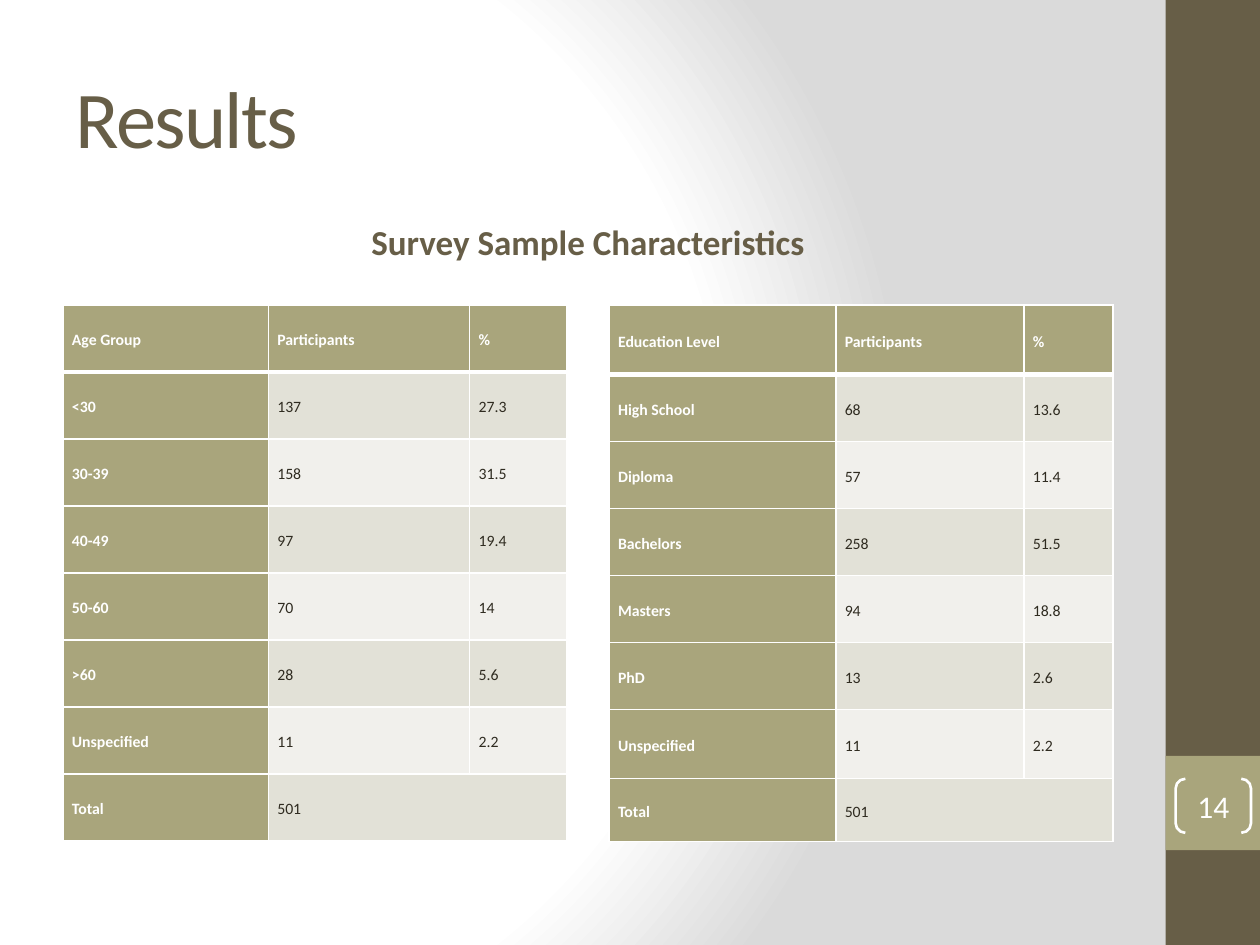
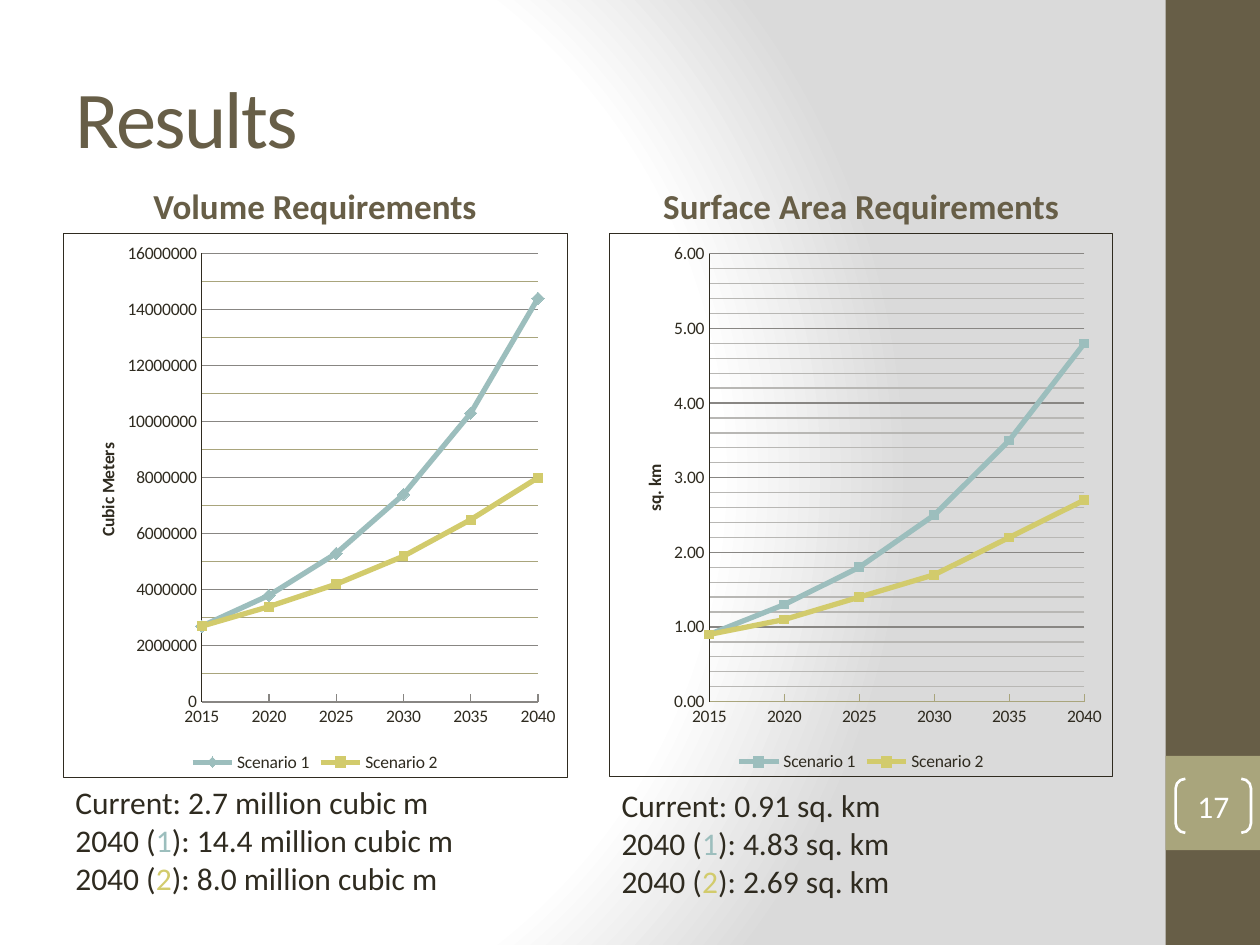
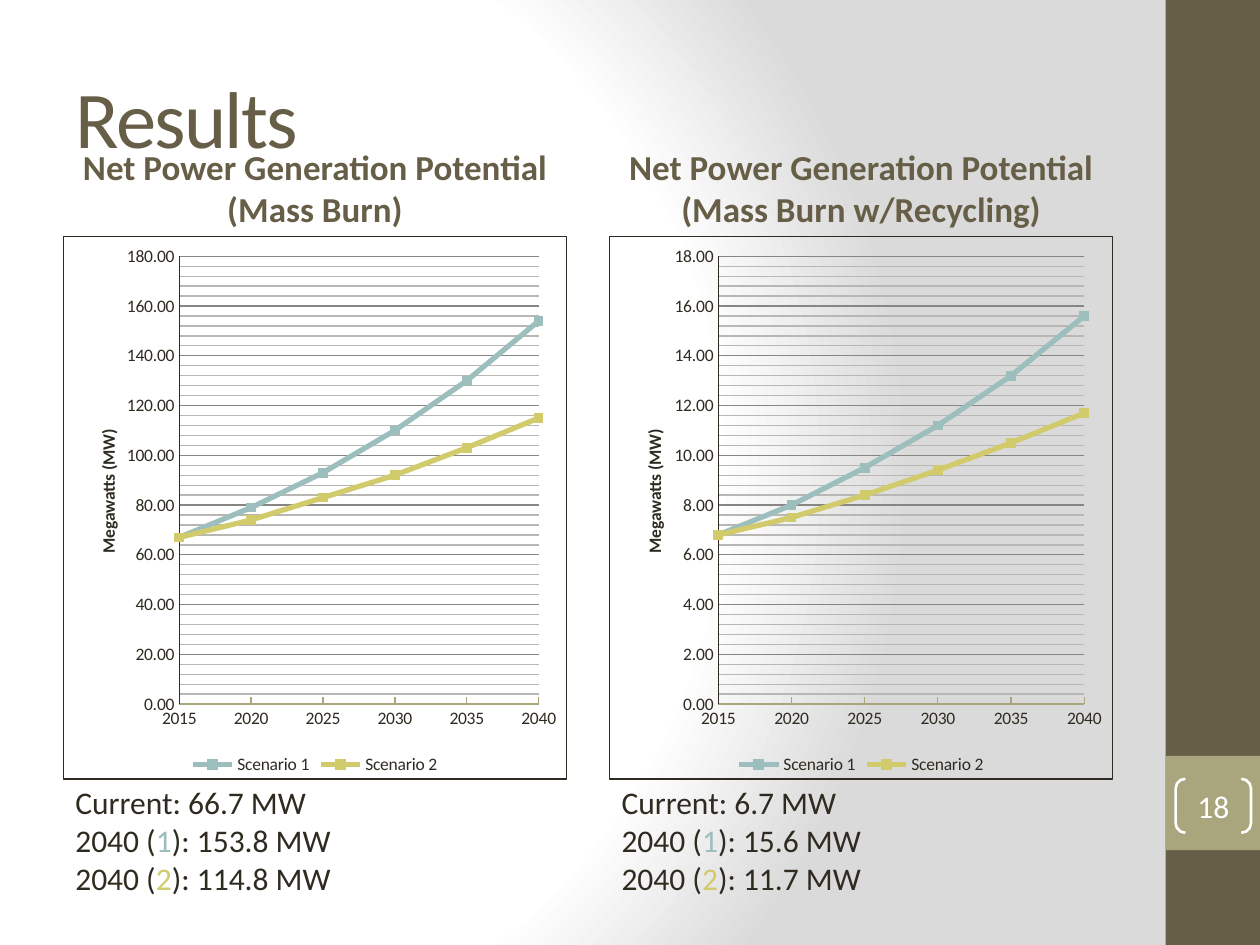
"""Build three results slides with survey tables and scenario line charts."""
from pptx import Presentation
from pptx.chart.data import CategoryChartData
from pptx.dml.color import RGBColor
from pptx.enum.chart import XL_CHART_TYPE as ChartType
from pptx.enum.chart import XL_LEGEND_POSITION as LegendPosition
from pptx.enum.chart import XL_MARKER_STYLE as Marker
from pptx.enum.chart import XL_TICK_MARK as TickMark
from pptx.enum.shapes import MSO_SHAPE as Preset
from pptx.enum.text import MSO_ANCHOR as Anchor
from pptx.enum.text import MSO_AUTO_SIZE as AutoSize
from pptx.enum.text import PP_ALIGN as Align
from pptx.oxml import parse_xml
from pptx.oxml.ns import nsdecls, qn
from pptx.util import Cm, Pt

FONT = "Calibri"
COLORS = {
    "brown": "675E47", "olive": "A9A57C", "ink": "2F2B20", "white": "FFFFFF",
    "shade": "DADADA", "band_dark": "E2E1D7", "band_light": "F1F0EC",
    "scenario_1": "9CBEBD", "scenario_2": "D2CB6C",
    "major_grid": "888683", "minor_grid": "B8B7B4",
}
LEFT, CONTENT_WIDTH, COLUMN_WIDTH = 1.27, 21.17, 10.16
COLUMN_LEFTS = (LEFT, LEFT + CONTENT_WIDTH - COLUMN_WIDTH)
TABLE_TOP, CHART_HEIGHT, NOTE_HEIGHT = 6.15, 10.97, 2.57
YEARS = ["2015", "2020", "2025", "2030", "2035", "2040"]

TABLES = [
    {"widths": [4.14, 4.06, 1.96], "heights": [1.35] * 8, "rows": [
        ("Age Group", "Participants", "%"),
        ("<30", "137", "27.3"), ("30-39", "158", "31.5"), ("40-49", "97", "19.4"),
        ("50-60", "70", "14"), (">60", "28", "5.6"), ("Unspecified", "11", "2.2"),
        ("Total", "501", "")]},
    {"widths": [4.57, 3.79, 1.8], "heights": [1.4] + [1.35] * 5 + [1.4, 1.27], "rows": [
        ("Education Level", "Participants", "%"),
        ("High School", "68", "13.6"), ("Diploma", "57", "11.4"),
        ("Bachelors", "258", "51.5"), ("Masters", "94", "18.8"),
        ("PhD", "13", "2.6"), ("Unspecified", "11", "2.2"), ("Total", "501", "")]},
]
CHART_SLIDES = [
    {"number": "17", "heading_top": 2.92, "chart_top": 4.7, "panels": [
        {"heading": "Volume Requirements", "axis": "Cubic Meters", "format": "0",
         "scale": (16000000, 2000000, 1000000), "plot": (0.275, 0.668), "title_top": 0.38,
         "minor": "olive", "axis_line": "major_grid", "border": 0.25,
         "marker": (Marker.DIAMOND, 7), "note_top": 15.67,
         "values": [(2700000, 3800000, 5300000, 7400000, 10300000, 14400000),
                    (2700000, 3400000, 4200000, 5200000, 6500000, 8000000)],
         "note": ("2.7 million cubic m", "14.4 million cubic m", "8.0 million cubic m")},
        {"heading": "Surface Area Requirements", "axis": "sq. km",
         "scale": (6, 1, 0.2), "plot": (0.198, 0.746), "title_top": 0.42, "note_top": 15.72,
         "values": [(0.9, 1.3, 1.8, 2.5, 3.5, 4.8), (0.9, 1.1, 1.4, 1.7, 2.2, 2.7)],
         "note": ("0.91 sq. km", "4.83 sq. km", "2.69 sq. km")}]},
    {"number": "18", "heading_top": 2.97, "chart_top": 4.75, "panels": [
        {"heading": "Net Power Generation Potential (Mass Burn)", "axis": "Megawatts (MW)",
         "scale": (180, 20, 4), "plot": (0.23, 0.715), "title_top": 0.35, "note_top": 15.67,
         "values": [(67, 79, 93, 110, 130, 154), (67, 74, 83, 92, 103, 115)],
         "note": ("66.7 MW", "153.8 MW", "114.8 MW")},
        {"heading": "Net Power Generation Potential (Mass Burn w/Recycling)",
         "axis": "Megawatts (MW)",
         "scale": (18, 2, 0.4), "plot": (0.216, 0.728), "title_top": 0.35, "note_top": 15.67,
         "values": [(6.8, 8, 9.5, 11.2, 13.2, 15.6), (6.8, 7.5, 8.4, 9.4, 10.5, 11.7)],
         "note": ("6.7 MW", "15.6 MW", "11.7 MW")}]},
]


def rgb(name):
    return RGBColor.from_string(COLORS[name])


def box(left, top, width, height):
    return Cm(left), Cm(top), Cm(width), Cm(height)


def move(shape, *lengths):
    shape.left, shape.top, shape.width, shape.height = box(*lengths)


def write(frame, lines, size=18, color="ink", bold=False, align=Align.LEFT, anchor=Anchor.TOP,
          spacing=None, line_spacing=None, space_after=None):
    """Fill a text frame; a line is a string or a list of (text, color) pairs."""
    frame.word_wrap = True
    frame.vertical_anchor = anchor
    for index, line in enumerate(lines):
        paragraph = frame.add_paragraph() if index else frame.paragraphs[0]
        paragraph.alignment = align
        paragraph.line_spacing = line_spacing
        paragraph.space_after = space_after
        for text, run_color in [(line, color)] if isinstance(line, str) else line:
            run = paragraph.add_run()
            run.text = text
            run.font.name, run.font.size, run.font.bold = FONT, Pt(size), bold
            run.font.color.rgb = rgb(run_color)
            if spacing is not None:
                run.font._element.set("spc", str(spacing))


def style_line(line, color, width):
    line.color.rgb = rgb(color)
    line.width = Pt(width)


def line_xml(tag, color, width):
    return (f'<a:{tag} {nsdecls("a")} w="{Pt(width)}"><a:solidFill>'
            f'<a:srgbClr val="{COLORS[color]}"/></a:solidFill></a:{tag}>')


def style_master(master, slide):
    master.background.fill.solid()
    properties = master.element.cSld.bg.bgPr
    stops = "".join(
        f'<a:gs pos="{position}000"><a:srgbClr val="{COLORS[color]}"/></a:gs>'
        for position, color in ((0, "white"), (75, "white"), (100, "shade")))
    properties.replace(properties[0], parse_xml(
        f'<a:gradFill {nsdecls("a")} rotWithShape="1"><a:gsLst>{stops}</a:gsLst>'
        '<a:path path="circle"><a:fillToRect l="20000" t="50000" r="100000" b="50000"/>'
        '</a:path></a:gradFill>'))
    bands = (("brown", 0, 19.05), ("olive", 15.24, 1.9))
    for index, (color, top, height) in enumerate(bands):
        band = slide.shapes.add_shape(Preset.RECTANGLE, *box(23.5, top, 1.9, height))
        band.shadow.inherit = False
        band.fill.solid()
        band.fill.fore_color.rgb = rgb(color)
        band.line.fill.background()
        master.element.cSld.spTree.insert(2 + index, band._element)


def add_results_slide(presentation, number, headings, heading_top, heading_width, heading_height):
    slide = presentation.slides.add_slide(presentation.slide_layouts[4])
    title = slide.shapes.title
    move(title, LEFT, 0.76, CONTENT_WIDTH, 3.18)
    title.text_frame.auto_size = AutoSize.NONE
    write(title.text_frame, ["Results"], size=46, color="brown", anchor=Anchor.MIDDLE,
          spacing=-100)
    placeholders = {item.placeholder_format.idx: item for item in slide.placeholders}
    for index, left, heading in zip((1, 3), COLUMN_LEFTS, headings):
        body = placeholders[index]
        move(body, left, heading_top, heading_width, heading_height)
        body.text_frame.auto_size = AutoSize.NONE
        write(body.text_frame, [heading], size=20, color="brown", bold=True,
              align=Align.CENTER, anchor=Anchor.BOTTOM)
    for placeholder in placeholders.values():
        if not placeholder.text_frame.text:
            placeholder._element.getparent().remove(placeholder._element)
    bracket = slide.shapes.add_shape(Preset.DOUBLE_BRACKET, *box(23.7, 15.7, 1.52, 1.09))
    bracket.adjustments[0] = 0.18
    bracket.shadow.inherit = False
    bracket.fill.background()
    style_line(bracket.line, "white", 1.5)
    frame = bracket.text_frame
    frame.margin_left = frame.margin_right = frame.margin_top = frame.margin_bottom = 0
    write(frame, [number], color="white", align=Align.CENTER, anchor=Anchor.MIDDLE)
    return slide


def set_borders(cell, top, bottom):
    properties = cell._tc.get_or_add_tcPr()
    for index, (side, width) in enumerate((("L", 1), ("R", 1), ("T", top), ("B", bottom))):
        properties.insert(index, parse_xml(line_xml(f"ln{side}", "white", width)))


def add_survey_table(slide, left, widths, heights, rows):
    table = slide.shapes.add_table(
        len(rows), len(widths),
        *box(left, TABLE_TOP, sum(widths), sum(heights))).table
    for column, width in zip(table.columns, widths):
        column.width = Cm(width)
    for row, height in zip(table.rows, heights):
        row.height = Cm(height)
    for row_index, row in enumerate(rows):
        for column_index, text in enumerate(row):
            cell = table.cell(row_index, column_index)
            is_label = row_index == 0 or column_index == 0
            band = "band_dark" if row_index % 2 else "band_light"
            cell.fill.solid()
            cell.fill.fore_color.rgb = rgb("olive" if is_label else band)
            cell.margin_left = cell.margin_right = Cm(0.18)
            cell.margin_top, cell.margin_bottom = Cm(0.02), 0
            cell.vertical_anchor = Anchor.MIDDLE
            set_borders(cell, 3 if row_index == 1 else 1, 3 if row_index == 0 else 1)
            if text:
                write(cell.text_frame, [text], size=9, bold=is_label,
                      color="white" if is_label else "ink", align=Align.JUSTIFY,
                      anchor=Anchor.MIDDLE, line_spacing=1.15, space_after=Pt(10))
    last = len(rows) - 1
    table.cell(last, 1).merge(table.cell(last, 2))


def set_layout(parent, target="", **fractions):
    inner = f'<c:layoutTarget val="{target}"/>' if target else ""
    modes = "".join(f'<c:{key}Mode val="edge"/>' for key in fractions if key in "xy")
    values = "".join(f'<c:{key} val="{value}"/>' for key, value in fractions.items())
    layout = parse_xml(f'<c:layout {nsdecls("c")}><c:manualLayout>{inner}{modes}{values}'
                       '</c:manualLayout></c:layout>')
    existing = parent.find(qn("c:layout"))
    if existing is None:
        parent.insert(0, layout)
    else:
        parent.replace(existing, layout)


def style_value_axis(axis, panel):
    axis.minimum_scale = 0
    axis.maximum_scale, axis.major_unit, minor_unit = panel["scale"]
    axis.has_major_gridlines = axis.has_minor_gridlines = True
    style_line(axis.major_gridlines.format.line, "major_grid", 0.75)
    style_line(axis.format.line, "ink", 0.25)
    axis.major_tick_mark = axis.minor_tick_mark = TickMark.NONE
    axis.tick_labels.number_format = panel.get("format", "0.00")
    axis.tick_labels.number_format_is_linked = False
    element = axis._element
    minor_line = line_xml("ln", panel.get("minor", "minor_grid"), 0.75)
    element.find(qn("c:minorGridlines")).append(
        parse_xml(f'<c:spPr {nsdecls("c")}>{minor_line}</c:spPr>'))
    for old in element.findall(qn("c:crossBetween")) + element.findall(qn("c:minorUnit")):
        element.remove(old)
    element.find(qn("c:crosses")).addnext(
        parse_xml(f'<c:crossBetween {nsdecls("c")} val="midCat"/>'))
    element.find(qn("c:majorUnit")).addnext(
        parse_xml(f'<c:minorUnit {nsdecls("c")} val="{minor_unit}"/>'))
    frame = axis.axis_title.text_frame
    write(frame, [panel["axis"]], size=10, bold=True, align=Align.CENTER)
    frame._txBody.bodyPr.set("rot", "-5400000")
    frame._txBody.bodyPr.set("vert", "horz")
    set_layout(element.find(qn("c:title")), x=0.06, y=panel["title_top"])


def add_scenario_chart(slide, left, top, panel):
    data = CategoryChartData()
    data.categories = YEARS
    for index, values in enumerate(panel["values"], 1):
        data.add_series(f"Scenario {index}", values)
    chart = slide.shapes.add_chart(
        ChartType.LINE_MARKERS, *box(left, top, COLUMN_WIDTH, CHART_HEIGHT), data).chart
    chart.has_title = False
    chart.font.name, chart.font.size = FONT, Pt(10)
    chart.font.color.rgb = rgb("ink")
    chart.has_legend = True
    chart.legend.position = LegendPosition.BOTTOM
    chart.legend.include_in_layout = False
    plot = chart.plots[0]
    plot.vary_by_categories = False
    markers = (panel.get("marker", (Marker.SQUARE, 5)), (Marker.SQUARE, 5))
    for index, (series, (style, size)) in enumerate(zip(plot.series, markers), 1):
        color = f"scenario_{index}"
        series.smooth = False
        style_line(series.format.line, color, 3)
        series.marker.style, series.marker.size = style, size
        series.marker.format.fill.solid()
        series.marker.format.fill.fore_color.rgb = rgb(color)
        style_line(series.marker.format.line, color, 0.75)
    style_value_axis(chart.value_axis, panel)
    chart.category_axis.major_tick_mark = TickMark.INSIDE
    chart.category_axis.minor_tick_mark = TickMark.NONE
    style_line(chart.category_axis.format.line, panel.get("axis_line", "olive"), 0.75)
    space = chart.element
    plot_left, plot_width = panel["plot"]
    set_layout(space.find(qn("c:chart")).find(qn("c:plotArea")), target="inner",
               x=plot_left, y=0.037, w=plot_width, h=0.825)
    if space.find(qn("c:roundedCorners")) is None:
        space.find(qn("c:date1904")).addnext(
            parse_xml(f'<c:roundedCorners {nsdecls("c")} val="0"/>'))
    border = line_xml("ln", "ink", panel.get("border", 0.75))
    space.find(qn("c:txPr")).addprevious(parse_xml(
        f'<c:spPr {nsdecls("c", "a")}><a:noFill/>{border}</c:spPr>'))


def add_note(slide, left, panel):
    current, *forecasts = panel["note"]
    lines = [f"Current: {current}"]
    for index, forecast in enumerate(forecasts, 1):
        lines.append([("2040 (", "ink"), (str(index), f"scenario_{index}"),
                      (f"): {forecast}", "ink")])
    frame = slide.shapes.add_textbox(
        *box(left, panel["note_top"], COLUMN_WIDTH, NOTE_HEIGHT)).text_frame
    frame.auto_size = AutoSize.SHAPE_TO_FIT_TEXT
    write(frame, lines)


def main():
    presentation = Presentation()
    presentation.slide_width, presentation.slide_height = Cm(25.4), Cm(19.05)
    slide = add_results_slide(presentation, "14", ["Survey Sample Characteristics"],
                              4.24, CONTENT_WIDTH, 1.17)
    style_master(presentation.slide_master, slide)
    for left, table in zip(COLUMN_LEFTS, TABLES):
        add_survey_table(slide, left, **table)
    for content in CHART_SLIDES:
        panels = content["panels"]
        slide = add_results_slide(presentation, content["number"],
                                  [panel["heading"] for panel in panels],
                                  content["heading_top"], COLUMN_WIDTH, 1.78)
        for left, panel in zip(COLUMN_LEFTS, panels):
            add_scenario_chart(slide, left, content["chart_top"], panel)
            add_note(slide, left, panel)
    presentation.save("out.pptx")


if __name__ == "__main__":
    main()
